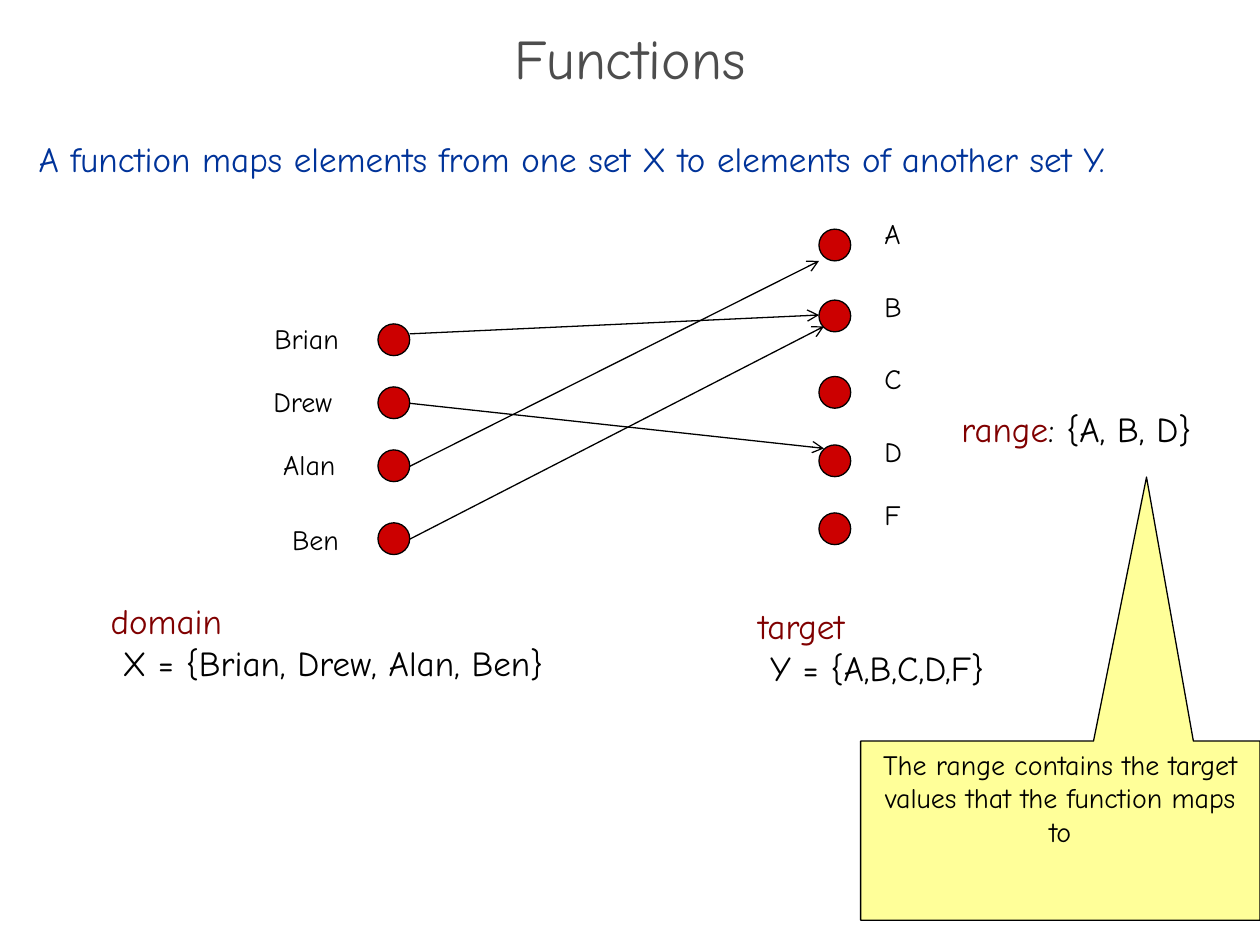
"""Build a slide that shows a function as a mapping from people to grades."""
from lxml import etree
from pptx import Presentation
from pptx.dml.color import RGBColor
from pptx.enum.shapes import MSO_CONNECTOR as Connector, MSO_SHAPE as Shape
from pptx.enum.text import MSO_ANCHOR as Anchor, MSO_AUTO_SIZE as AutoSize, PP_ALIGN as Align
from pptx.oxml.ns import qn
from pptx.util import Cm, Pt

BLACK = RGBColor(0x00, 0x00, 0x00)
GREY = RGBColor(0x4D, 0x4D, 0x4D)
BLUE = RGBColor(0x00, 0x33, 0x99)
MAROON = RGBColor(0x80, 0x00, 0x00)
RED = RGBColor(0xCC, 0x00, 0x00)
YELLOW = RGBColor(0xFF, 0xFF, 0x99)
FONT = "Comic Neue"

TITLE = "Functions"
STATEMENT = "A function maps elements from one set X to elements of another set Y."
CALLOUT = "The range contains the target values that the function maps to"

DOT = 0.64
DOMAIN_X, TARGET_X, GRADE_X = 7.62, 16.51, 17.58
PEOPLE = [
    ("Brian", 6.53, (5.28, 6.35, 1.9, 0.94)),
    ("Drew", 7.8, (5.26, 7.62, 1.9, 0.94)),
    ("Alan", 9.07, (5.46, 8.89, 1.68, 0.94)),
    ("Ben", 10.54, (5.64, 10.41, 1.47, 0.94)),
]
GRADES = [
    ("A", 4.62, 4.24),
    ("B", 6.05, 5.72),
    ("C", 7.59, 7.16),
    ("D", 8.97, 8.64),
    ("F", 10.34, 9.91),
]
MAPPINGS = [
    (6.73, TARGET_X, 6.35),
    (8.13, TARGET_X + 0.1, 9.04),
    (9.4, TARGET_X, 5.26),
    (10.87, TARGET_X + 0.1, 6.58),
]
CAPTIONS = [
    ((1.98, 11.96, 9.91, 1.96),
     [[("domain", MAROON)], [(" X = {Brian, Drew, Alan, Ben}", BLACK)]]),
    ((15.04, 12.07, 5.61, 1.96),
     [[("target", MAROON)], [(" Y = {A,B,C,D,F}", BLACK)]]),
    ((19.13, 8.1, 5.61, 1.12),
     [[("range", MAROON), (": {A, B, D}", BLACK)]]),
    ((0.53, 2.64, 24.26, 1.12), [[(STATEMENT, BLUE)]]),
]


def write(frame, paragraphs, size, **formats):
    for index, spans in enumerate(paragraphs):
        para = frame.paragraphs[0] if index == 0 else frame.add_paragraph()
        for name, value in formats.items():
            setattr(para, name, value)
        for text, colour in spans:
            span = para.add_run()
            span.text = text
            for name, value in {"name": FONT, "size": Pt(size)}.items():
                setattr(span.font, name, value)
            span.font.color.rgb = colour


def add_text(page, place, paragraphs, size):
    frame = page.shapes.add_textbox(*map(Cm, place)).text_frame
    frame.word_wrap = False
    frame.auto_size = AutoSize.SHAPE_TO_FIT_TEXT
    write(frame, paragraphs, size)


def add_figure(page, kind, place, fill):
    figure = page.shapes.add_shape(kind, *map(Cm, place))
    figure.shadow.inherit = False
    figure.fill.solid()
    figure.fill.fore_color.rgb = fill
    figure.line.color.rgb = BLACK
    figure.line.width = Pt(0.75)
    return figure


def add_arrow(page, *ends):
    arrow = page.shapes.add_connector(Connector.STRAIGHT, *map(Cm, ends))
    arrow.line.color.rgb = BLACK
    arrow.line.width = Pt(0.75)
    etree.SubElement(arrow.line._get_or_add_ln(), qn("a:tailEnd"), type="arrow")
    etree.SubElement(arrow._element.spPr, qn("a:effectLst"))


def add_title(page):
    title = page.shapes.title
    place = {"left": 0, "top": 0.69, "width": 25.4, "height": 1.27}
    for name, value in place.items():
        setattr(title, name, Cm(value))
    frame = title.text_frame
    frame.auto_size = AutoSize.NONE
    frame.vertical_anchor = Anchor.MIDDLE
    write(frame, [[(TITLE, GREY)]], 32, alignment=Align.CENTER, line_spacing=0.7)


def add_callout(page):
    callout = add_figure(page, Shape.RECTANGULAR_CALLOUT, (17.35, 14.94, 8.05, 3.61), YELLOW)
    callout.adjustments[0] = 0.216
    callout.adjustments[1] = -1.974
    frame = callout.text_frame
    frame.word_wrap = True
    frame.vertical_anchor = Anchor.TOP
    write(frame, [[(CALLOUT, BLACK)]], 16, alignment=Align.CENTER)


def main():
    deck = Presentation()
    deck.slide_width, deck.slide_height = Cm(25.4), Cm(19.05)
    page = deck.slides.add_slide(deck.slide_layouts[5])
    add_title(page)
    for name, top, place in PEOPLE:
        add_figure(page, Shape.OVAL, (DOMAIN_X, top, DOT, DOT), RED)
        add_text(page, place, [[(name, BLACK)]], 16)
    for grade, top, label_top in GRADES:
        add_figure(page, Shape.OVAL, (TARGET_X, top, DOT, DOT), RED)
        add_text(page, (GRADE_X, label_top, 0.97, 1.02), [[(grade, BLACK)]], 16)
    for start_y, end_x, end_y in MAPPINGS:
        add_arrow(page, DOMAIN_X + DOT, start_y, end_x, end_y)
    for place, paragraphs in CAPTIONS:
        add_text(page, place, paragraphs, 20)
    add_callout(page)
    deck.save("out.pptx")


if __name__ == "__main__":
    main()
